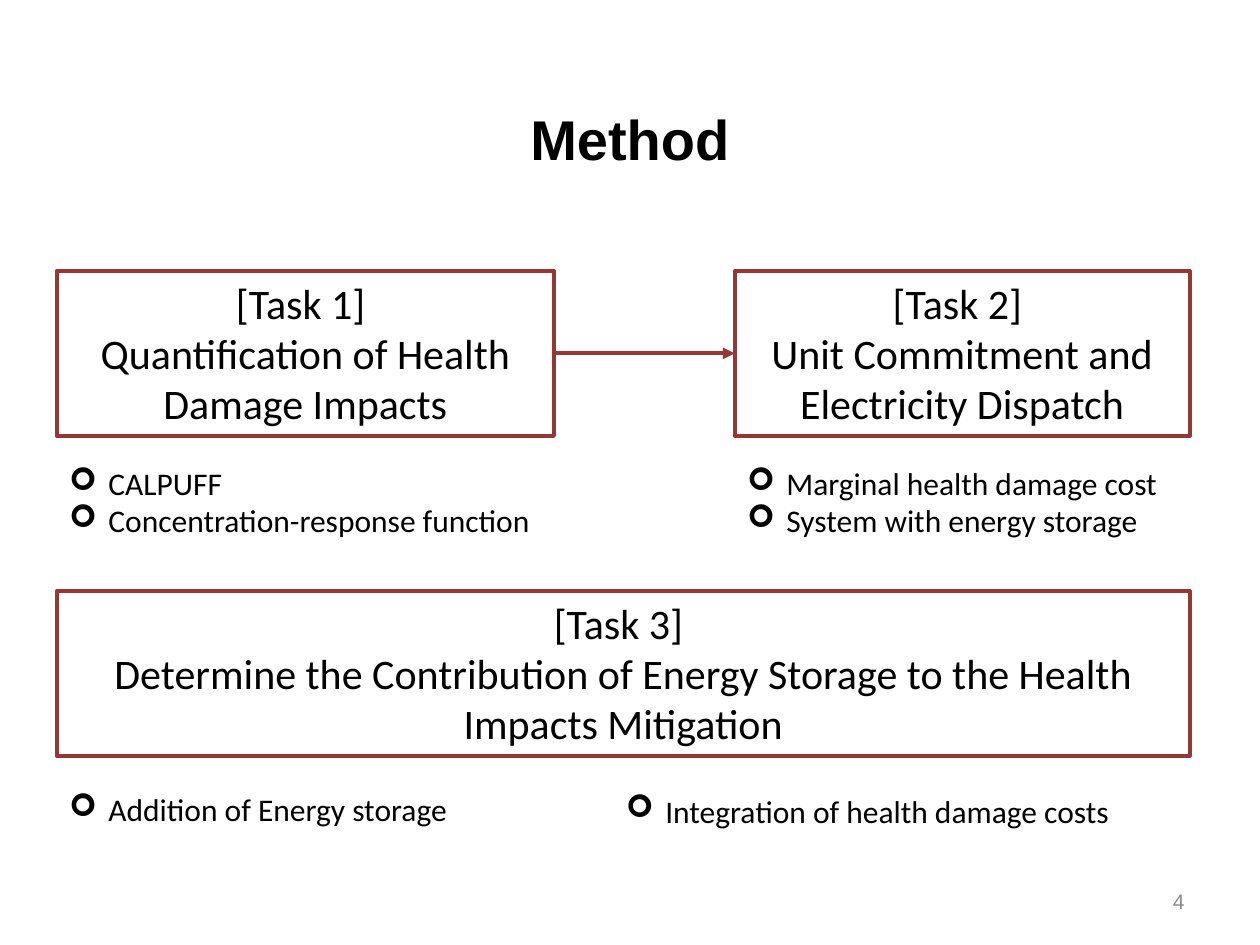
from lxml import etree
from pptx import Presentation
from pptx.dml.color import RGBColor
from pptx.enum import shapes, text
from pptx.oxml.ns import qn
from pptx.util import Pt

BLACK, GREY, RED = "000000", "8C8C8C", "953735"
LEFT, RIGHT_TASK = 32.4, 419.8
TASK_HEIGHT = 94.3
INDENT = 22.5


def color(value):
    return RGBColor.from_string(value)


def set_font(font, size, name="Calibri", fill=BLACK, bold=False):
    for key, value in {"size": Pt(size), "name": name, "bold": bold}.items():
        setattr(font, key, value)
    font.color.rgb = color(fill)


def write(frame, lines, align, anchor, **font):
    frame.word_wrap = True
    frame.vertical_anchor = anchor
    for i, line in enumerate(lines):
        paragraph = frame.paragraphs[0] if i == 0 else frame.add_paragraph()
        paragraph.alignment = align
        run = paragraph.add_run()
        run.text = line
        set_font(run.font, **font)


def add_text(slide, box, lines, align=text.PP_ALIGN.LEFT,
             anchor=text.MSO_ANCHOR.TOP, **font):
    frame = slide.shapes.add_textbox(*map(Pt, box)).text_frame
    write(frame, lines, align, anchor, **font)
    return frame


def add_task(slide, box, number, goal):
    task = slide.shapes.add_shape(shapes.MSO_SHAPE.RECTANGLE, *map(Pt, box))
    task.shadow.inherit = False
    task.fill.background()
    task.line.color.rgb = color(RED)
    task.line.width = Pt(2.25)
    write(task.text_frame, [f"[Task {number}] ", goal],
          text.PP_ALIGN.CENTER, text.MSO_ANCHOR.TOP, size=24)
    return task


def add_topics(slide, box, topics):
    frame = add_text(slide, box, topics, size=18)
    for paragraph in frame.paragraphs:
        properties = paragraph._p.get_or_add_pPr()
        properties.set("marL", str(Pt(INDENT)))
        properties.set("indent", str(-Pt(INDENT)))
        etree.SubElement(properties, qn("a:buFont"), typeface="Wingdings")
        etree.SubElement(properties, qn("a:buChar"), char="➢")


def add_arrow(slide, start, end):
    """Join the right side of start to the left side of end."""
    arrow = slide.shapes.add_connector(shapes.MSO_CONNECTOR.STRAIGHT, 0, 0, 0, 0)
    arrow.begin_connect(start, 3)
    arrow.end_connect(end, 1)
    arrow.line.color.rgb = color(RED)
    arrow.line.width = Pt(2.25)
    etree.SubElement(arrow.line._get_or_add_ln(), qn("a:tailEnd"), type="triangle")
    etree.SubElement(arrow._element.spPr, qn("a:effectLst"))


def main():
    deck = Presentation()
    deck.slide_width, deck.slide_height = Pt(720), Pt(540)
    slide = deck.slides.add_slide(deck.slide_layouts[6])

    add_text(slide, (36, 37, 648, 84), ["Method"], text.PP_ALIGN.CENTER,
             text.MSO_ANCHOR.MIDDLE, size=32, name="Arial", bold=True)
    add_text(slide, (516, 500.5, 168, 28.75), ["4"], text.PP_ALIGN.RIGHT,
             text.MSO_ANCHOR.MIDDLE, size=12, name="Arial", fill=GREY)

    damage = add_task(slide, (LEFT, 154.8, 284.2, TASK_HEIGHT), 1,
                      "Quantification of Health Damage Impacts")
    dispatch = add_task(slide, (RIGHT_TASK, 154.8, 260, TASK_HEIGHT), 2,
                        "Unit Commitment and Electricity Dispatch")
    add_task(slide, (LEFT, 337.7, 647.4, TASK_HEIGHT), 3,
             "Determine the Contribution of Energy Storage to the Health "
             "Impacts Mitigation")
    add_arrow(slide, damage, dispatch)

    for box, topics in (
        ((LEFT, 261.4, 284.2, 51), ["CALPUFF", "Concentration-response function"]),
        ((RIGHT_TASK, 261.4, 284.2, 51),
         ["Marginal health damage cost", "System with energy storage"]),
        ((LEFT, 447.8, 327.6, 29), ["Addition of Energy storage"]),
        ((350.6, 448.8, 327.6, 29), ["Integration of health damage costs"]),
    ):
        add_topics(slide, box, topics)

    deck.save("out.pptx")


if __name__ == "__main__":
    main()
